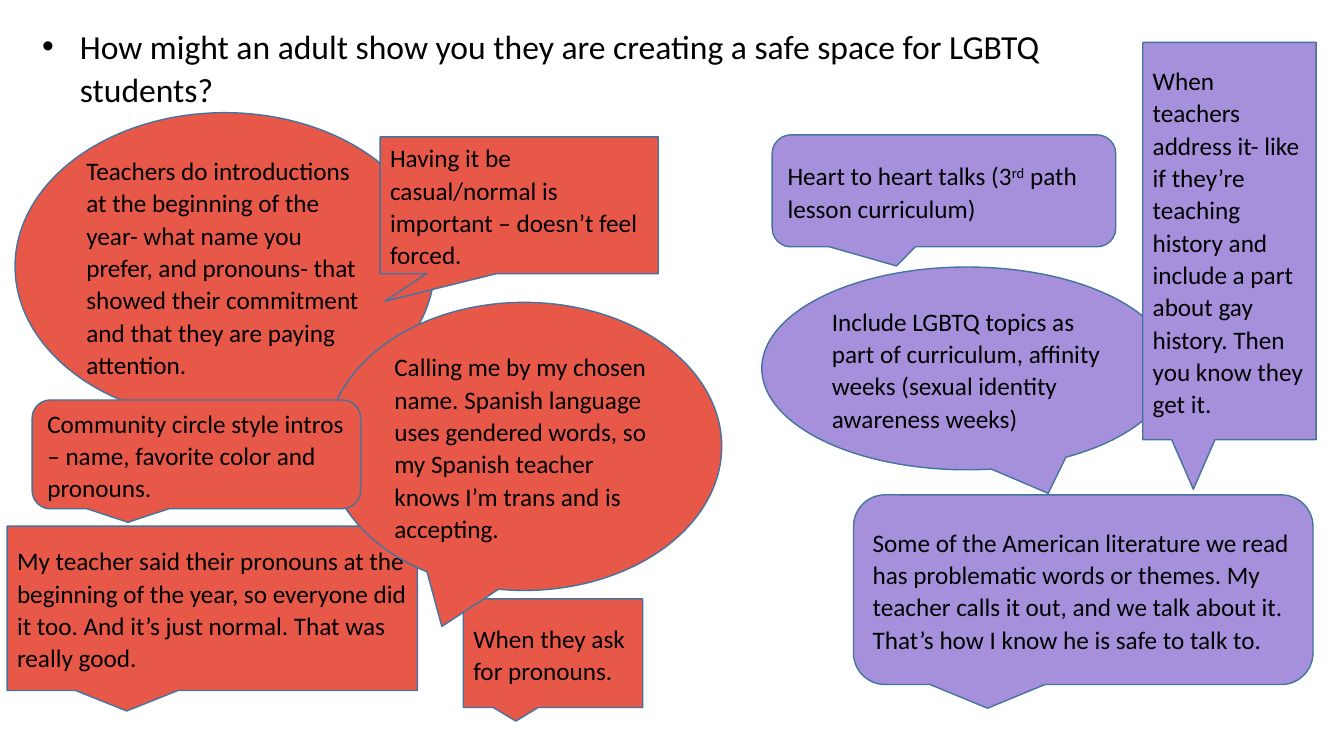
from pptx import Presentation
from pptx.dml.color import RGBColor
from pptx.enum.shapes import MSO_SHAPE
from pptx.enum.text import MSO_ANCHOR, MSO_AUTO_SIZE, PP_ALIGN
from pptx.util import Cm, Pt

RECT = MSO_SHAPE.RECTANGULAR_CALLOUT
ROUND = MSO_SHAPE.ROUNDED_RECTANGULAR_CALLOUT
OVAL = MSO_SHAPE.OVAL_CALLOUT
MIDDLE = MSO_ANCHOR.MIDDLE
GROW = MSO_AUTO_SIZE.SHAPE_TO_FIT_TEXT
LEFT = PP_ALIGN.LEFT

FONT = "Calibri"
RED, PURPLE, OUTLINE, BLACK = "E75849", "A690DC", "43739E", "000000"

# Callouts from back to front: preset, fill, box in cm, tail adjustments, text.
# Text between ^ marks is superscript.
CALLOUTS = [
    (OVAL, PURPLE, (19.2, 6.73, 10.34, 5.11), (0.198, 0.616),
     "Include LGBTQ topics as part of curriculum, affinity weeks "
     "(sexual identity awareness weeks)"),
    (OVAL, RED, (0.38, 2.84, 10.57, 7.75), (0.323, 0.475),
     "Teachers do introductions at the beginning of the year- what name you "
     "prefer, and pronouns- that showed their commitment and that they are "
     "paying attention."),
    (ROUND, PURPLE, (19.46, 3.4, 8.66, 2.82), (-0.138, 0.671),
     "Heart to heart talks (3^rd^ path lesson curriculum)"),
    (ROUND, PURPLE, (21.51, 12.47, 11.58, 4.78), (),
     "Some of the American literature we read has problematic words or "
     "themes. My teacher calls it out, and we talk about it. That’s how I "
     "know he is safe to talk to."),
    (RECT, RED, (9.58, 3.45, 7.01, 3.45), (-0.483, 0.701),
     "Having it be casual/normal is important – doesn’t feel forced."),
    (RECT, RED, (0.18, 13.26, 10.34, 4.14), (),
     "My teacher said their pronouns at the beginning of the year, so "
     "everyone did it too. And it’s just normal. That was really good."),
    (RECT, RED, (11.68, 15.09, 4.52, 2.74), (),
     "When they ask for pronouns."),
    (RECT, PURPLE, (28.8, 1.07, 4.37, 10.01), (),
     "When teachers address it- like if they’re teaching history and include "
     "a part about gay history. Then you know they get it."),
    (OVAL, RED, (8.23, 7.62, 9.96, 7.26), (),
     "Calling me by my chosen name. Spanish language uses gendered words, so "
     "my Spanish teacher knows I’m trans and is accepting."),
    (ROUND, RED, (0.81, 10.08, 8.28, 2.74), (),
     "Community circle style intros – name, favorite color and pronouns."),
]


def rgb(value):
    return RGBColor.from_string(value)


def format_paragraph(p, size):
    p.alignment = LEFT
    p.line_spacing = 1.07
    p.space_before = Pt(0)
    p.font.name = FONT
    p.font.size = Pt(size)
    p.font.color.rgb = rgb(BLACK)


def add_question(slide, text):
    """Put the bulleted question in the body placeholder."""
    body = slide.placeholders[1]
    body.left, body.top, body.width, body.height = (
        Cm(v) for v in (0.81, 0.46, 28.58, 2.41))
    tf = body.text_frame
    tf.text = text
    tf.word_wrap = True
    tf.auto_size = GROW
    p = tf.paragraphs[0]
    format_paragraph(p, 24)
    # Hanging indent for the bullet
    pPr = p._p.get_or_add_pPr()
    pPr.set("marL", str(Cm(0.95)))
    pPr.set("indent", str(-Cm(0.95)))


def add_callout(slide, preset, fill, box, tail, text):
    sp = slide.shapes.add_shape(preset, *(Cm(v) for v in box))
    sp.shadow.inherit = False
    sp.fill.solid()
    sp.fill.fore_color.rgb = rgb(fill)
    sp.line.color.rgb = rgb(OUTLINE)
    sp.line.width = Pt(1)
    for i, value in enumerate(tail):
        sp.adjustments[i] = value
    tf = sp.text_frame
    tf.word_wrap = True
    tf.vertical_anchor = MIDDLE
    p = tf.paragraphs[0]
    format_paragraph(p, 18)
    for i, part in enumerate(text.split("^")):
        r = p.add_run()
        r.text = part
        if i % 2:
            r._r.get_or_add_rPr().set("baseline", "30000")


def main():
    prs = Presentation()
    prs.slide_width, prs.slide_height = Cm(33.87), Cm(19.05)
    slide = prs.slides.add_slide(prs.slide_layouts[1])

    # Question, without a separate title
    title = slide.shapes.title._element
    title.getparent().remove(title)
    add_question(slide, "How might an adult show you they are creating a "
                        "safe space for LGBTQ students?")

    # Student answers
    for callout in CALLOUTS:
        add_callout(slide, *callout)

    prs.save("out.pptx")


if __name__ == "__main__":
    main()
